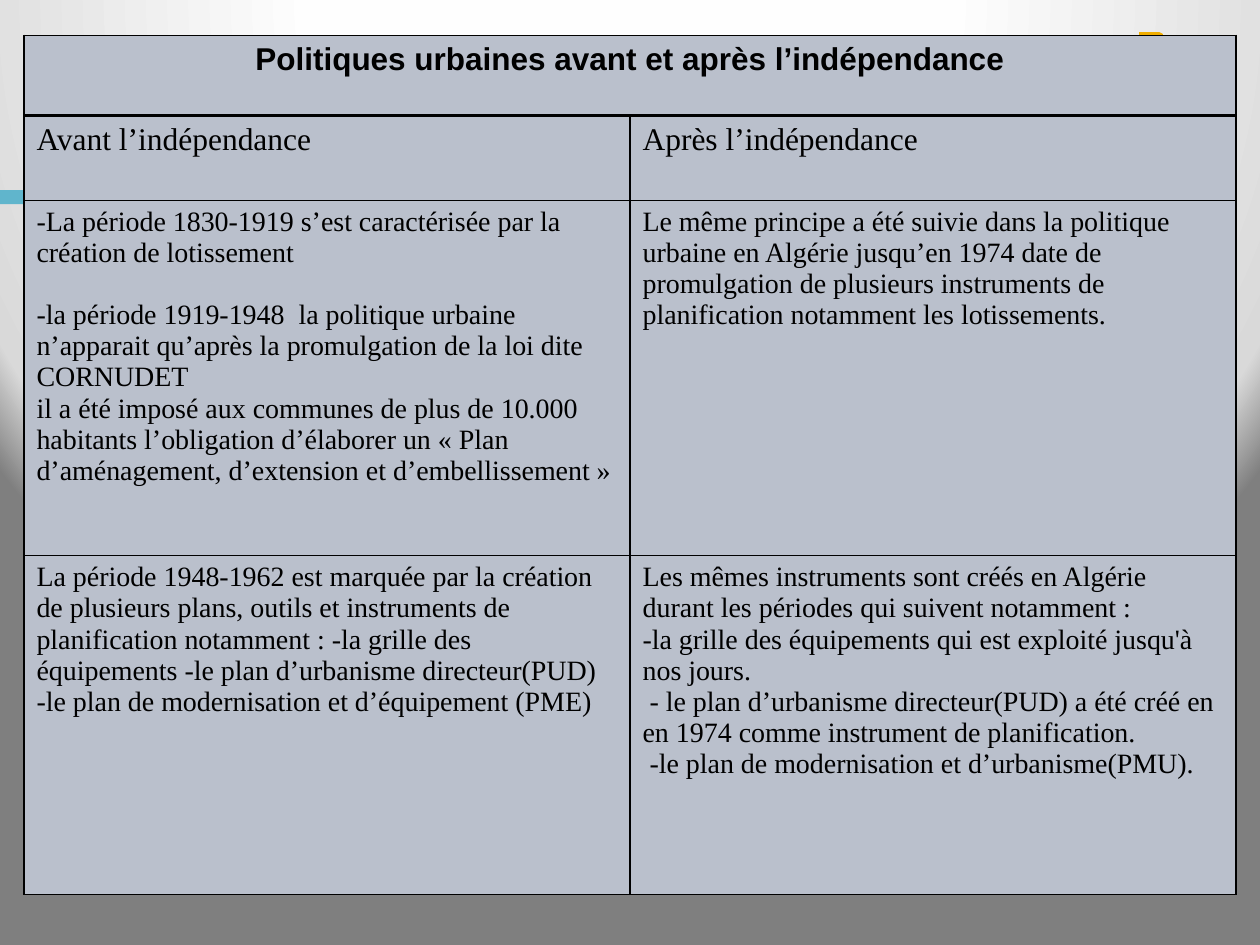
from lxml import etree
from pptx import Presentation
from pptx import util as u
from pptx.dml.color import RGBColor
from pptx.enum import shapes, text
from pptx.oxml import ns

BLACK = RGBColor(0x00, 0x00, 0x00)
CELL_GREY = RGBColor(0xBA, 0xC0, 0xCC)
TEAL = RGBColor(0x60, 0xB5, 0xCC)
AMBER = RGBColor(0xF0, 0xAD, 0x00)
BACKDROP = [
    (40, RGBColor(0xFE, 0xFE, 0xFE)),
    (91, RGBColor(0xD9, 0xD9, 0xD9)),
    (100, RGBColor(0x7F, 0x7F, 0x7F)),
]

TITLE = "Politiques urbaines avant et après l’indépendance"
HEADINGS = ["Avant l’indépendance", "Après l’indépendance"]
PERIODS = [
    [
        [
            "-La période 1830-1919 s’est caractérisée par la création de lotissement",
            "-la période 1919-1948  la politique urbaine n’apparait qu’après la "
            "promulgation de la loi dite CORNUDET",
            "il a été imposé aux communes de plus de 10.000 habitants l’obligation "
            "d’élaborer un « Plan d’aménagement, d’extension et d’embellissement »",
        ],
        [
            "Le même principe a été suivie dans la politique urbaine en Algérie "
            "jusqu’en 1974 date de promulgation de plusieurs instruments de "
            "planification notamment les lotissements.",
        ],
    ],
    [
        [
            "La période 1948-1962 est marquée par la création de plusieurs plans, "
            "outils et instruments de planification notamment : -la grille des "
            "équipements -le plan d’urbanisme directeur(PUD) -le plan de "
            "modernisation et d’équipement (PME)",
        ],
        [
            "Les mêmes instruments sont créés en Algérie durant les périodes qui "
            "suivent notamment :",
            "-la grille des équipements qui est exploité jusqu'à nos jours.",
            " - le plan d’urbanisme directeur(PUD) a été créé en en 1974 comme "
            "instrument de planification.",
            " -le plan de modernisation et d’urbanisme(PMU).",
        ],
    ],
]


def write(frame, paragraphs, size=16, font="Times New Roman", bold=False,
          align=text.PP_ALIGN.LEFT):
    for index, wording in enumerate(paragraphs):
        paragraph = frame.add_paragraph() if index else frame.paragraphs[0]
        paragraph.alignment = align
        run = paragraph.add_run()
        run.text = wording
        run.font.size = u.Pt(size)
        run.font.name = font
        run.font.bold = bold
        run.font.color.rgb = BLACK


class Deck:
    def __init__(self, width, height):
        self.show = Presentation()
        self.show.slide_width = u.Inches(width)
        self.show.slide_height = u.Inches(height)
        self.slide = self.show.slides.add_slide(self.show.slide_layouts[6])

    def backdrop(self, stops):
        self.slide.background.fill.gradient()
        gradient = self.slide.element.find(".//" + ns.qn("a:gradFill"))
        for child in list(gradient):
            gradient.remove(child)
        stop_list = etree.SubElement(gradient, ns.qn("a:gsLst"))
        for position, color in stops:
            stop = etree.SubElement(stop_list, ns.qn("a:gs"), pos=str(position * 1000))
            etree.SubElement(stop, ns.qn("a:srgbClr"), val=str(color))
        circle = etree.SubElement(gradient, ns.qn("a:path"), path="circle")
        etree.SubElement(circle, ns.qn("a:fillToRect"),
                         l="50000", t="-80000", r="50000", b="180000")

    def bar(self, left, top, width, height, color):
        band = self.slide.shapes.add_shape(
            shapes.MSO_SHAPE.RECTANGLE,
            u.Inches(left), u.Inches(top), u.Inches(width), u.Inches(height))
        band.shadow.inherit = False
        band.fill.solid()
        band.fill.fore_color.rgb = color
        band.line.fill.background()

    def bracket(self, left, top, width, height, color):
        left, top = u.Inches(left), u.Inches(top)
        right, bottom = left + u.Inches(width), top + u.Inches(height)
        builder = self.slide.shapes.build_freeform(left, top)
        builder.add_line_segments(
            [(right, top), (right, bottom), (left, bottom)], close=False)
        outline = builder.convert_to_shape()
        outline.shadow.inherit = False
        outline.fill.background()
        outline.line.color.rgb = color
        outline.line.width = u.Pt(6)

    def table(self, left, top, columns, rows):
        grid = self.slide.shapes.add_table(
            len(rows), len(columns), u.Inches(left), u.Inches(top),
            u.Inches(sum(columns)), u.Inches(sum(rows))).table
        grid.first_row = grid.horz_banding = False
        for column, width in zip(grid.columns, columns):
            column.width = u.Inches(width)
        for row, height in zip(grid.rows, rows):
            row.height = u.Inches(height)
        return grid

    def cell_style(self, cell, top=1, bottom=1):
        properties = cell._tc.get_or_add_tcPr()
        for side, weight in zip("LRTB", (1, 1, top, bottom)):
            border = etree.SubElement(properties, ns.qn("a:ln" + side),
                                      w=str(u.Pt(weight)))
            paint = etree.SubElement(border, ns.qn("a:solidFill"))
            etree.SubElement(paint, ns.qn("a:srgbClr"), val=str(BLACK))
        cell.fill.solid()
        cell.fill.fore_color.rgb = CELL_GREY


def main():
    deck = Deck(10, 7.5)
    deck.backdrop(BACKDROP)
    deck.bar(0, 1.51, 2.33, 0.11, TEAL)
    deck.bracket(9.04, 0.3, 0.16, 1.17, AMBER)

    policies = deck.table(0.19, 0.28, [4.81, 4.81], [0.64, 0.67, 2.82, 2.69])
    for index, row in enumerate(policies.rows):
        for cell in row.cells:
            deck.cell_style(cell, top=2 if index == 1 else 1,
                            bottom=2 if index == 0 else 1)

    title = policies.cell(0, 0)
    title.merge(policies.cell(0, 1))
    write(title.text_frame, [TITLE], size=18, font="Arial", bold=True,
          align=text.PP_ALIGN.CENTER)
    for column, heading in enumerate(HEADINGS):
        write(policies.cell(1, column).text_frame, [heading], size=18)
    for row, period in enumerate(PERIODS, start=2):
        for column, paragraphs in enumerate(period):
            write(policies.cell(row, column).text_frame, paragraphs)
    policies.cell(2, 0).text_frame.paragraphs[1].space_before = u.Pt(17.7)

    deck.show.save("out.pptx")


if __name__ == "__main__":
    main()
